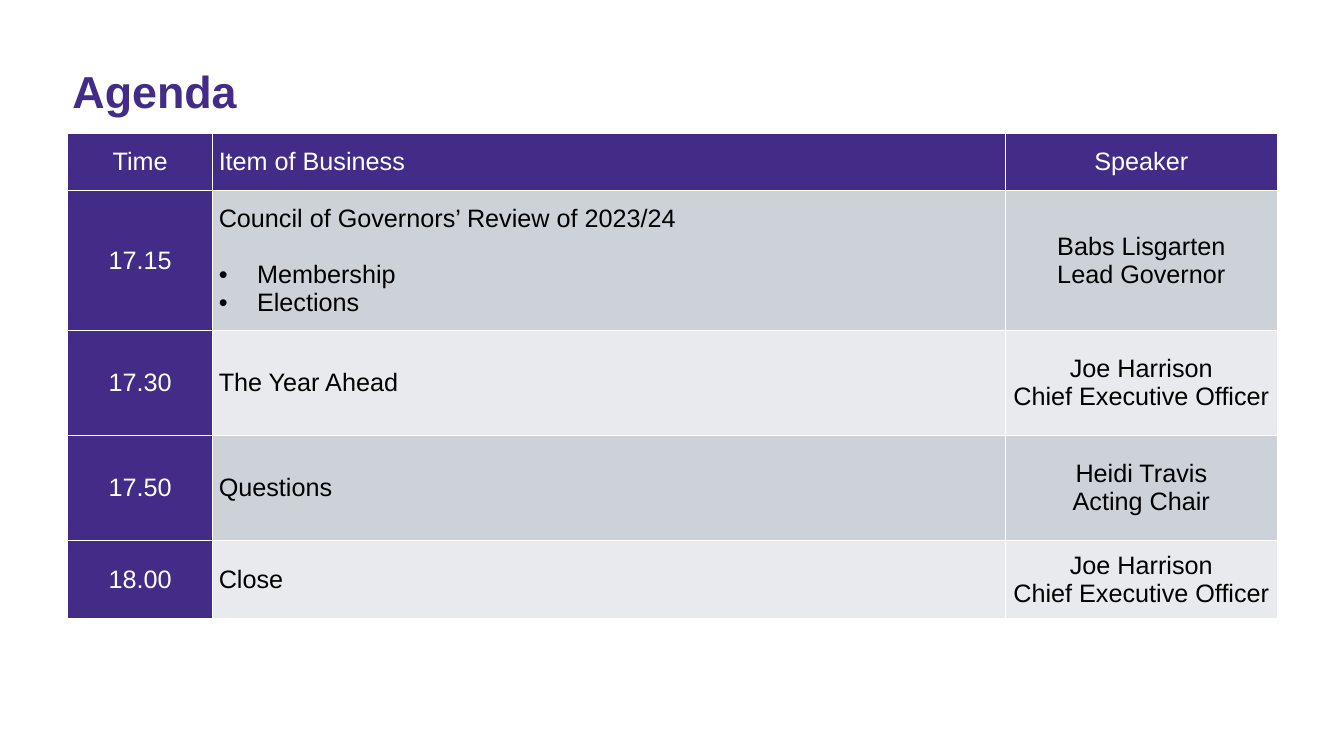
"""Build the agenda slide: a heading above a timetable of items and speakers."""
from lxml.etree import SubElement as add_element
from pptx import Presentation
from pptx.dml.color import RGBColor as Color
from pptx.enum.text import MSO_ANCHOR as Anchor, PP_ALIGN as Align
from pptx.oxml.ns import qn
from pptx.util import Inches, Pt

COLORS = {"purple": "422C88", "white": "FFFFFF", "black": "000000",
          "dark_band": "CCD2D8", "light_band": "E8EAED"}
FONT = "Arial"
BULLET = "•"
COLUMN_WIDTHS = [1.44, 7.86, 2.7]
ROW_HEIGHTS = [0.57, 1.39, 1.04, 1.04, 0.78]
AGENDA = [
    (["Time"], ["Item of Business"], ["Speaker"]),
    (["17.15"],
     ["Council of Governors’ Review of 2023/24", "•Membership", "•Elections"],
     ["Babs Lisgarten", "Lead Governor"]),
    (["17.30"], ["The Year Ahead"], ["Joe Harrison", "Chief Executive Officer"]),
    (["17.50"], ["Questions"], ["Heidi Travis", "Acting Chair"]),
    (["18.00"], ["Close"], ["Joe Harrison", "Chief Executive Officer"]),
]


def add_span(para, text, size, color, bold=False):
    span = para.add_run()
    span.text = text
    span.font.name = FONT
    span.font.size = Pt(size)
    span.font.bold = bold
    span.font.color.rgb = Color.from_string(COLORS[color])


def add_borders(cell):
    properties = cell._tc.get_or_add_tcPr()
    for position, side in enumerate(["lnL", "lnR", "lnT", "lnB"]):
        line = add_element(properties, qn(f"a:{side}"), w=str(Pt(1)))
        fill = add_element(line, qn("a:solidFill"))
        add_element(fill, qn("a:srgbClr"), val=COLORS["white"])
        properties.insert(position, line)


deck = Presentation()
deck.slide_width, deck.slide_height = Inches(13.33), Inches(7.5)
page = deck.slides.add_slide(deck.slide_layouts[6])

frame = page.shapes.add_table(
    len(ROW_HEIGHTS), len(COLUMN_WIDTHS), Inches(0.67), Inches(1.32),
    Inches(sum(COLUMN_WIDTHS)), Inches(sum(ROW_HEIGHTS)))
table = frame.table
table.horz_banding = False
for column, width in zip(table.columns, COLUMN_WIDTHS):
    column.width = Inches(width)
for row, height in zip(table.rows, ROW_HEIGHTS):
    row.height = Inches(height)

for row_index, entries in enumerate(AGENDA):
    band = "dark_band" if row_index % 2 else "light_band"
    for column_index, lines in enumerate(entries):
        heading = row_index == 0 or column_index == 0
        cell = table.cell(row_index, column_index)
        cell.fill.solid()
        cell.fill.fore_color.rgb = Color.from_string(COLORS["purple" if heading else band])
        cell.vertical_anchor = Anchor.MIDDLE
        cell.margin_left = cell.margin_right = Inches(0.06)
        cell.margin_top = cell.margin_bottom = 0
        add_borders(cell)
        for line_index, text in enumerate(lines):
            box = cell.text_frame
            para = box.add_paragraph() if line_index else box.paragraphs[0]
            para.alignment = Align.LEFT if column_index == 1 else Align.CENTER
            if text.startswith(BULLET):
                properties = para._p.get_or_add_pPr()
                properties.set("marL", str(Inches(0.38)))
                properties.set("indent", str(-Inches(0.38)))
                add_element(properties, qn("a:buFont"), typeface=FONT)
                add_element(properties, qn("a:buChar"), char=BULLET)
                if line_index == 1:
                    para.space_before = Pt(20)
            add_span(para, text.lstrip(BULLET), 18, "white" if heading else "black")

title = page.shapes.add_textbox(Inches(0.62), Inches(0.53), Inches(9), Inches(0.82))
title.text_frame.word_wrap = True
title.text_frame.margin_top = Inches(0.1)
add_span(title.text_frame.paragraphs[0], "Agenda", 32, "purple", bold=True)

deck.save("out.pptx")
